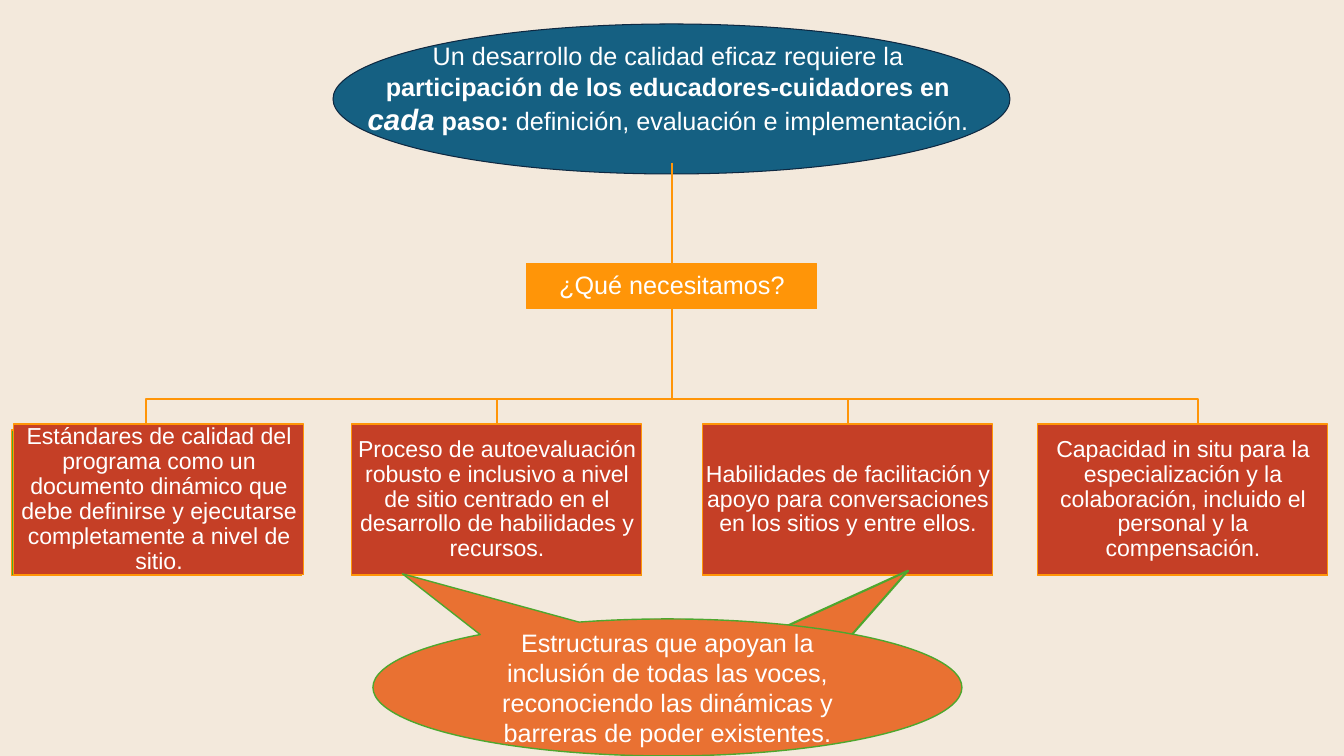
from pptx import Presentation
from pptx.dml.color import RGBColor
from pptx.enum.shapes import MSO_CONNECTOR as Line, MSO_SHAPE as Shape
from pptx.enum.text import MSO_ANCHOR as Anchor, MSO_AUTO_SIZE as AutoSize, PP_ALIGN as Align
from pptx.oxml.ns import qn
from pptx.util import Pt
from lxml.etree import SubElement

SCALE = 12192000 / 1344  # EMU per px
ORANGE, GREEN, RED, CORAL = "FF9508", "4AAC24", "C53F26", "E97132"


def px(length):
    return round(length * SCALE)


def colour(code):
    return RGBColor.from_string(code)


def write(shape, *runs, size=18, spacing=1.0, inset=(1, 1)):
    """Fill a shape with one centred paragraph; a run is (text, font overrides)."""
    frame = shape.text_frame
    frame.word_wrap, frame.auto_size = True, AutoSize.NONE
    frame.vertical_anchor = Anchor.MIDDLE
    frame.margin_left = frame.margin_right = px(inset[0])
    frame.margin_top = frame.margin_bottom = px(inset[1])
    paragraph = frame.paragraphs[0]
    paragraph.alignment, paragraph.line_spacing = Align.CENTER, spacing
    for text, changes in runs:
        run = paragraph.add_run()
        run.text = text
        font = run.font
        font.name, font.color.rgb = "Arial", colour("FFFFFF")
        font.size = Pt(changes.get("size", size))
        font.bold = changes.get("bold", False)
        font.italic = changes.get("italic", False)


class Diagram:
    def __init__(self, slide, line=ORANGE, weight=0.75):
        self.slide, self.line, self.weight = slide, line, weight
        slide.background.fill.solid()
        slide.background.fill.fore_color.rgb = colour("F3E9DC")

    def outline(self, item, line=None, weight=None):
        item.line.color.rgb = colour(line or self.line)
        item.line.width = Pt(weight or self.weight)

    def shape(self, kind, box, fill, line=None, weight=None):
        shape = self.slide.shapes.add_shape(kind, *map(px, box))
        shape.shadow.inherit = False
        shape.fill.solid()
        shape.fill.fore_color.rgb = colour(fill)
        self.outline(shape, line, weight)
        return shape

    def heading(self, box, *runs):
        title = self.slide.shapes.title
        title.left, title.top, title.width, title.height = map(px, box)
        # Bring the heading in front of the oval
        title._element.getparent().append(title._element)
        write(title, *runs)

    def branch(self, start, *corners):
        builder = self.slide.shapes.build_freeform(*start, scale=SCALE)
        builder.add_line_segments(corners, close=False)
        branch = builder.convert_to_shape()
        branch.shadow.inherit = False
        branch.fill.background()
        self.outline(branch, weight=1)

    def trunk(self, start, target):
        x, y = map(px, start)
        trunk = self.slide.shapes.add_connector(Line.STRAIGHT, x, y, x, target.top)
        trunk.end_connect(target, 0)
        SubElement(trunk._element.spPr, qn("a:effectLst"))
        self.outline(trunk, weight=1)

    def card(self, left, backing_left, text):
        self.shape(Shape.RECTANGLE, (backing_left, 430, 290, 146), GREEN)
        card = self.shape(Shape.RECTANGLE, (left, 424, 290, 151), RED)
        write(card, (text, {}), size=16.5, spacing=0.9)


def main():
    deck = Presentation()
    deck.slide_width, deck.slide_height = px(1344), px(756)
    diagram = Diagram(deck.slides.add_slide(deck.slide_layouts[5]))

    # Main idea
    diagram.shape(Shape.OVAL, (333, 24, 677, 150), "156082", line="0E2841")

    # Branches to the four needs
    centre, top = 672, 163
    for drop in (1198, 848, 497, 146):
        diagram.branch((centre, top), (centre, 399), (drop, 399), (drop, 430))

    diagram.heading(
        (352, 16, 632, 145),
        ("Un desarrollo de calidad eficaz requiere la ", {}),
        ("participación de los educadores-cuidadores en ", {"bold": True}),
        ("cada", {"bold": True, "italic": True, "size": 21}),
        (" paso: ", {"bold": True}),
        ("definición, evaluación e implementación.", {}),
    )

    # Needs
    needs = (
        (14, 12, "Estándares de calidad del programa como un documento dinámico que "
                 "debe definirse y ejecutarse completamente a nivel de sitio."),
        (352, 352, "Proceso de autoevaluación robusto e inclusivo a nivel de sitio "
                   "centrado en el desarrollo de habilidades y recursos."),
        (703, 703, "Habilidades de facilitación y apoyo para conversaciones en los "
                   "sitios y entre ellos."),
        (1038, 1038, "Capacidad in situ para la especialización y la colaboración, "
                     "incluido el personal y la compensación."),
    )
    for need in needs:
        diagram.card(*need)

    # Question
    question = diagram.shape(Shape.RECTANGLE, (527, 264, 290, 45), ORANGE)
    write(question, ("¿Qué necesitamos?", {}), spacing=0.9)
    diagram.trunk((centre, top), question)

    # Supporting structures, pointing at two needs
    pointer = diagram.shape(Shape.ISOSCELES_TRIANGLE, (815, 536, 60, 137), CORAL,
                            line="4EA72E", weight=1.5)
    pointer.adjustments[0] = 0.84
    pointer.rotation = 45.3
    structures = diagram.shape(Shape.OVAL_CALLOUT, (373, 619, 589, 137), CORAL,
                               line="4EA72E", weight=1)
    structures.adjustments[0], structures.adjustments[1] = -0.45, -0.83
    write(structures, ("Estructuras que apoyan la inclusión de todas las voces, "
                       "reconociendo las dinámicas y barreras de poder existentes.", {}),
          inset=(10, 5))

    deck.save("out.pptx")


if __name__ == "__main__":
    main()
